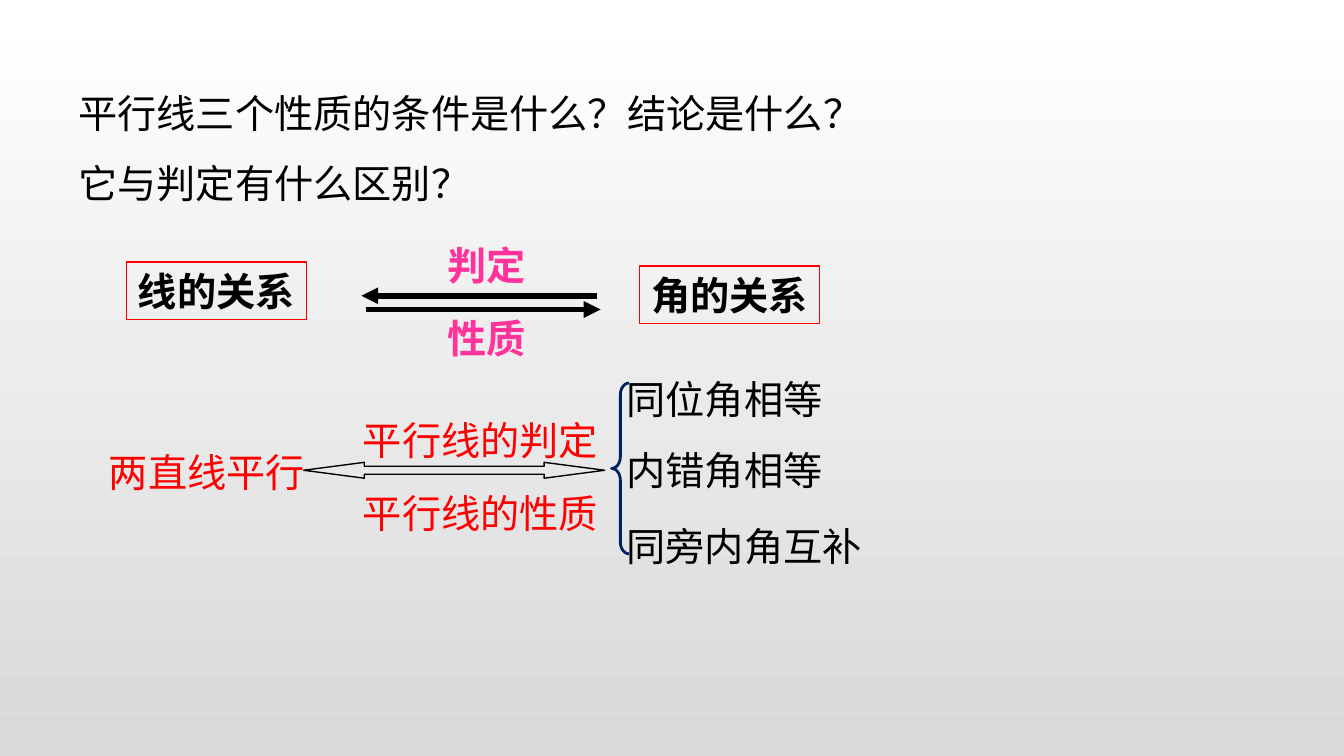
from pptx import Presentation
from pptx.dml.color import RGBColor
from pptx.enum.shapes import MSO_CONNECTOR as Link, MSO_SHAPE as Kind
from pptx.enum.text import MSO_ANCHOR as Anchor, MSO_AUTO_SIZE as Fit
from pptx.oxml.ns import qn
from pptx.util import Cm, Pt
from lxml.etree import SubElement as Sub

FACE = "Noto Sans CJK SC"
BLACK, RED, PINK, NAVY = "000000", "FF0000", "FF3399", "002060"
HIGH = 1.09
FRAME = {
    "margin_left": Cm(0.18), "margin_right": Cm(0.18),
    "margin_top": Cm(0.1), "margin_bottom": Cm(0.1),
    "vertical_anchor": Anchor.TOP, "auto_size": Fit.SHAPE_TO_FIT_TEXT,
}


def color(code):
    """Turn a hex string into a colour."""
    return RGBColor.from_string(code)


def apply(item, values):
    """Set each attribute named in a dict."""
    for name, value in values.items():
        setattr(item, name, value)


def write(shape, words, ink, bold=False, wrap=True, space=1.0):
    """Fill a shape with one formatted paragraph."""
    frame = shape.text_frame
    apply(frame, {**FRAME, "word_wrap": wrap})
    para = frame.paragraphs[0]
    para.line_spacing = space
    run = para.add_run()
    run.text = words
    apply(run.font, {"name": FACE, "size": Pt(21), "bold": bold})
    run.font.color.rgb = color(ink)
    Sub(run.font._element, qn("a:ea"), typeface=FACE)


def label(slide, box, words, ink, **style):
    """Add a text box."""
    write(slide.shapes.add_textbox(*map(Cm, box)), words, ink, **style)


def outline(slide, kind, box, ink, width, adjust=()):
    """Add an unfilled preset shape."""
    shape = slide.shapes.add_shape(kind, *map(Cm, box))
    shape.shadow.inherit = False
    shape.fill.background()
    shape.line.color.rgb = color(ink)
    shape.line.width = Pt(width)
    for spot, value in enumerate(adjust):
        shape.adjustments[spot] = value
    return shape


def arrow(slide, start, end, y):
    """Add a thick level arrow."""
    line = slide.shapes.add_connector(Link.STRAIGHT, Cm(start), Cm(y), Cm(end), Cm(y))
    line.line.color.rgb = color(BLACK)
    line.line.width = Pt(3)
    Sub(line.line._get_or_add_ln(), qn("a:tailEnd"), type="triangle")
    Sub(line._element.spPr, qn("a:effectLst"))


def backdrop(slide):
    """Shade the background from white down to grey."""
    fill = slide.background.fill
    fill.gradient()
    fill.gradient_angle = 270
    for stop, code in zip(fill.gradient_stops, ("FFFFFF", "D9D9D9")):
        stop.color.rgb = color(code)


def question(slide, box):
    """Place the opening question."""
    label(slide, box, "平行线三个性质的条件是什么？结论是什么？它与判定有什么区别？",
          BLACK, space=1.5)


def relation(slide, box):
    """Place the two framed terms and the arrows between them."""
    left, top, width, _ = box
    side = 3.4
    terms = (("线的关系", left, 0.48), ("角的关系", left + width - side, 0.56))
    for words, x, down in terms:
        rect = outline(slide, Kind.RECTANGLE, (x, top + down, side, HIGH), RED, 0.75)
        write(rect, words, BLACK, bold=True, wrap=False)
    arrow(slide, left + 8.89, left + 4.44, top + 1.12)
    arrow(slide, left + 4.52, left + 8.96, top + 1.38)
    for words, down in (("判定", 0), ("性质", 1.37)):
        label(slide, (left + 5.88, top + down, 2.5, HIGH), words, PINK, bold=True)


def theorem(slide, box):
    """Place the parallel lines, the double arrow and the braced angle facts."""
    left, top, width, high = box
    label(slide, (left, top + 1.39, 4.62, HIGH), "两直线平行", RED)
    for words, down in (("平行线的判定", 0.78), ("平行线的性质", 2.15)):
        label(slide, (left + 4.8, top + down, 5.7, HIGH), words, RED)
    facts = (("同位角相等", 0), ("内错角相等", 1.35), ("同旁内角互补", high - HIGH))
    for words, down in facts:
        label(slide, (left + width - 5.7, top + down, 5.7, HIGH), words, BLACK)
    outline(slide, Kind.LEFT_RIGHT_ARROW, (left + 3.86, top + 1.75, 5.69, 0.3),
            BLACK, 0.75, (0.5, 3.82))
    outline(slide, Kind.LEFT_BRACE, (left + 9.68, top + 0.25, 0.33, 3.23),
            NAVY, 1.5, (0.67, 0.5))


def main():
    """Build and save the slide."""
    deck = Presentation()
    apply(deck, {"slide_width": Cm(25.4), "slide_height": Cm(14.29)})
    slide = deck.slides.add_slide(deck.slide_layouts[6])
    backdrop(slide)
    question(slide, (1.3, 1.14, 15.32, 2.87))
    relation(slide, (2.39, 4.47, 13.1, 2.46))
    theorem(slide, (1.88, 6.99, 15.48, 3.88))
    deck.save("out.pptx")


if __name__ == "__main__":
    main()
